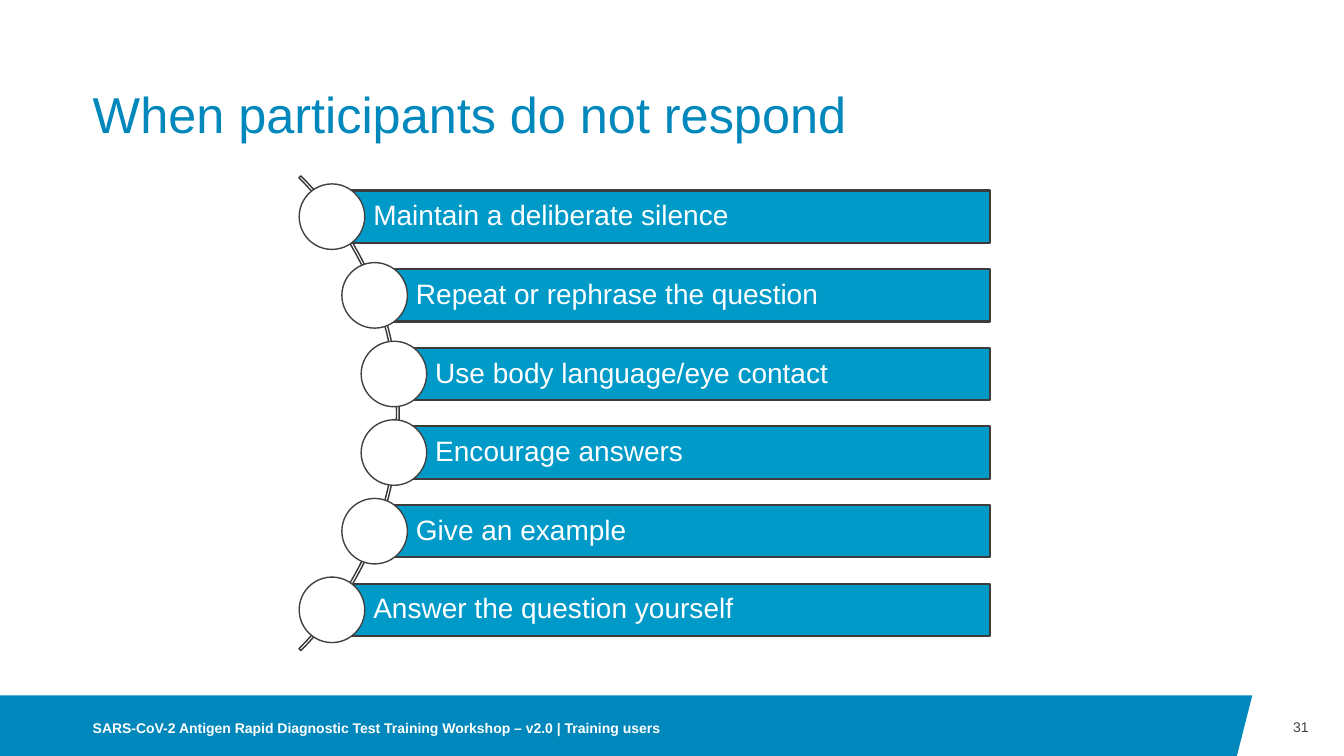
"""Build the slide on what to do when participants do not respond."""
import math

from pptx import Presentation
from pptx import util as u
from pptx.dml import color
from pptx.enum import shapes, text

Inches = u.Inches


def rgb(value):
    return color.RGBColor.from_string(value)


def write(shape, words, size, ink, align=text.PP_ALIGN.LEFT, anchor=text.MSO_ANCHOR.MIDDLE,
          insets=(0, 0, 0, 0), spacing=1.0, bold=False):
    frame = shape.text_frame
    frame.word_wrap = True
    frame.vertical_anchor = anchor
    frame.margin_left, frame.margin_top, frame.margin_right, frame.margin_bottom = map(Inches, insets)
    paragraph = frame.paragraphs[0]
    paragraph.alignment = align
    paragraph.line_spacing = spacing
    run = paragraph.add_run()
    run.text = words
    run.font.name = "Arial"
    run.font.size = u.Pt(size)
    run.font.bold = bold
    run.font.color.rgb = rgb(ink)


deck = Presentation()
deck.slide_width, deck.slide_height = Inches(13.33), Inches(7.5)
slide = deck.slides.add_slide(deck.slide_layouts[6])
canvas = slide.shapes

outline = canvas.build_freeform(Inches(0), Inches(6.9))
outline.add_line_segments(
    [(Inches(x), Inches(y)) for x, y in [(12.42, 6.9), (12.26, 7.53), (0, 7.53)]], close=True)
footer_band = outline.convert_to_shape()
footer_band.shadow.inherit = False
footer_band.fill.solid()
footer_band.fill.fore_color.rgb = rgb("0087BC")
footer_band.line.fill.background()

title = canvas.add_textbox(Inches(0.92), Inches(0.4), Inches(11.5), Inches(1.03))
write(title, "When participants do not respond", 36, "0087BC",
      anchor=text.MSO_ANCHOR.BOTTOM, spacing=0.9)

page_number = canvas.add_textbox(Inches(12.42), Inches(6.9), Inches(0.56), Inches(0.63))
write(page_number, "31", 10, "424242", align=text.PP_ALIGN.RIGHT)

arc_x, arc_y, arc_size = 0.63, 4.1, 6.66
arc = canvas.add_shape(shapes.MSO_SHAPE.BLOCK_ARC, Inches(arc_x - arc_size / 2),
                       Inches(arc_y - arc_size / 2), Inches(arc_size), Inches(arc_size))
arc.shadow.inherit = False
for index, value in enumerate([189, 27, 0.004]):
    arc.adjustments[index] = value
arc.fill.background()
arc.line.color.rgb = rgb("353535")
arc.line.width = u.Pt(1)

techniques = [
    "Maintain a deliberate silence",
    "Repeat or rephrase the question",
    "Use body language/eye contact",
    "Encourage answers",
    "Give an example",
    "Answer the question yourself",
]
pitch, bar_height, bar_right, dot_size, dot_radius = 0.78, 0.52, 9.82, 0.65, 3.3

for row, technique in enumerate(techniques):
    offset = (row - (len(techniques) - 1) / 2) * pitch
    center_x = arc_x + math.sqrt(dot_radius ** 2 - offset ** 2)
    center_y = arc_y + offset
    bar = canvas.add_shape(shapes.MSO_SHAPE.RECTANGLE, Inches(center_x),
                           Inches(center_y - bar_height / 2),
                           Inches(bar_right - center_x), Inches(bar_height))
    dot = canvas.add_shape(shapes.MSO_SHAPE.OVAL, Inches(center_x - dot_size / 2),
                           Inches(center_y - dot_size / 2), Inches(dot_size), Inches(dot_size))
    for part, fill, edge, width in [(bar, "009AC9", "3C3C3C", 1.5), (dot, "FFFFFF", "424242", 1)]:
        part.shadow.inherit = False
        part.fill.solid()
        part.fill.fore_color.rgb = rgb(fill)
        part.line.color.rgb = rgb(edge)
        part.line.width = u.Pt(width)
    write(bar, technique, 20, "FFFFFF", insets=(0.41, 0.06, 0.06, 0.06), spacing=0.9)

footer = canvas.add_textbox(Inches(0.92), Inches(6.95), Inches(8), Inches(0.55))
write(footer, "SARS-CoV-2 Antigen Rapid Diagnostic Test Training Workshop – v2.0 | Training users",
      10, "FFFFFF", bold=True)

deck.save("out.pptx")
